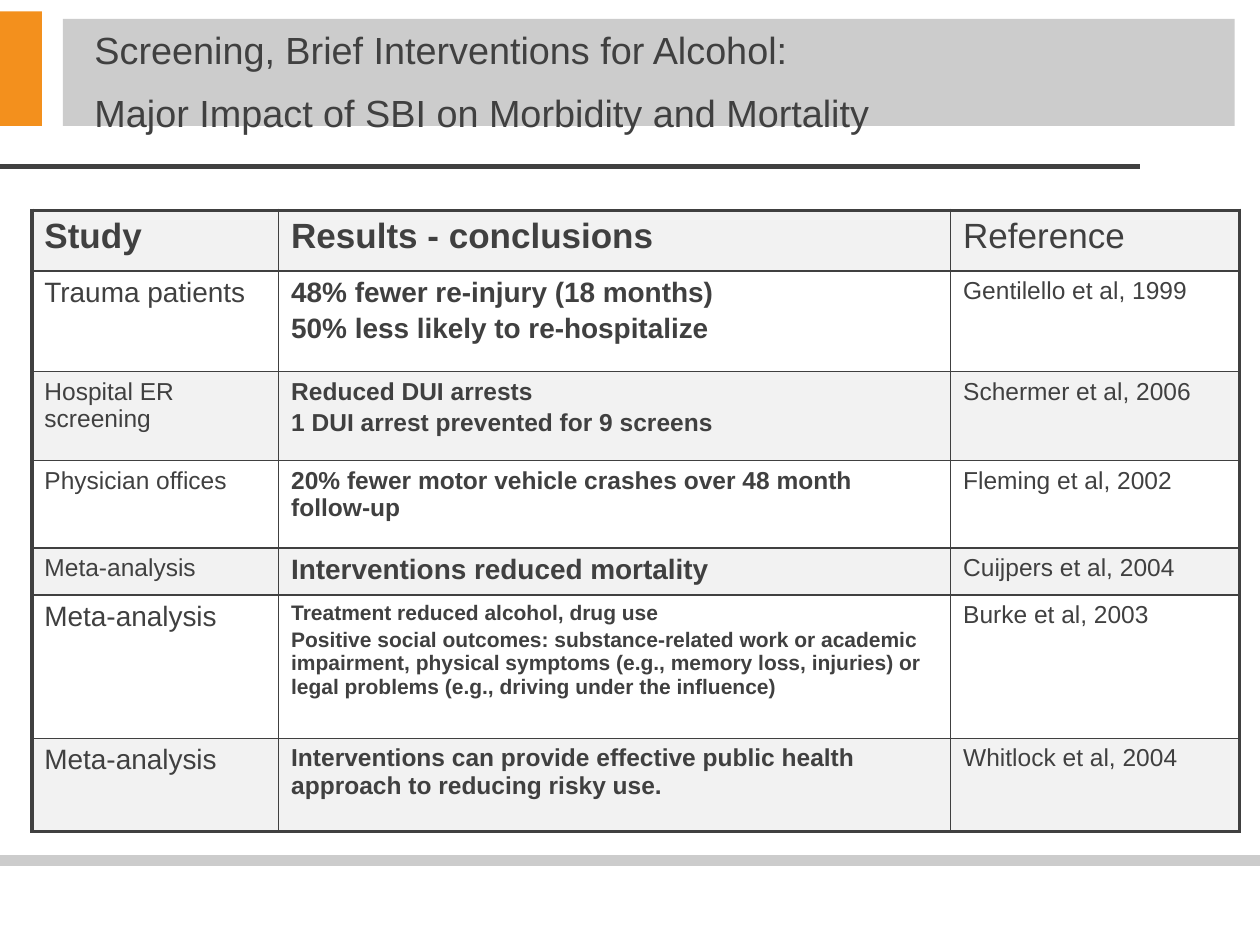
from lxml import etree
from pptx import Presentation
from pptx import util as u
from pptx.dml.color import RGBColor
from pptx.enum import shapes, text
from pptx.oxml.ns import qn

Pt = u.Pt


def rgb(value):
    return RGBColor.from_string(value)


class Deck:
    font = "Arial"
    ink = "404040"
    gray = "CCCCCC"
    accent = "F3901D"
    band = "F2F2F2"
    outer, inner = 2.25, 1

    def __init__(self, width, height):
        self.prs = Presentation()
        self.prs.slide_width, self.prs.slide_height = Pt(width), Pt(height)
        self.s = self.prs.slides.add_slide(self.prs.slide_layouts[6])

    def line(self, x1, x2, y, color, width):
        c = self.s.shapes.add_connector(
            shapes.MSO_CONNECTOR.STRAIGHT, Pt(x1), Pt(y), Pt(x2), Pt(y))
        c.line.color.rgb = rgb(color)
        c.line.width = Pt(width)
        etree.SubElement(c._element.spPr, qn("a:effectLst"))

    def rect(self, x, y, w, h, color):
        sp = self.s.shapes.add_shape(
            shapes.MSO_SHAPE.RECTANGLE, Pt(x), Pt(y), Pt(w), Pt(h))
        sp.shadow.inherit = False
        sp.fill.solid()
        sp.fill.fore_color.rgb = rgb(color)
        sp.line.fill.background()
        return sp

    def style(self, p, size, bold=False):
        p.alignment = text.PP_ALIGN.LEFT
        for r in p.runs:
            r.font.name = self.font
            r.font.size = Pt(size)
            r.font.bold = bold
            r.font.color.rgb = rgb(self.ink)

    def title(self, x, y, w, h, value, size):
        tf = self.rect(x, y, w, h, self.gray).text_frame
        tf.word_wrap = True
        tf.vertical_anchor = text.MSO_ANCHOR.MIDDLE
        tf.margin_left = Pt(18)
        tf.margin_right = Pt(7.2)
        tf.margin_top = tf.margin_bottom = Pt(3.6)
        p = tf.paragraphs[0]
        p.text = value
        p.line_spacing = Pt(36)
        self.style(p, size)

    def borders(self, cell, widths):
        tc_pr = cell._tc.get_or_add_tcPr()
        for i, (side, width) in enumerate(zip("LRTB", widths)):
            ln = etree.Element(qn(f"a:ln{side}"), w=str(Pt(width)))
            fill = etree.SubElement(ln, qn("a:solidFill"))
            etree.SubElement(fill, qn("a:srgbClr"), val=self.ink)
            tc_pr.insert(i, ln)

    def cell(self, cell, value, size, bold, banded):
        tf = cell.text_frame
        tf.text = value
        for i, p in enumerate(tf.paragraphs):
            p.space_before = Pt(0.17 * size if i else 0)
            self.style(p, size, bold)
        if banded:
            cell.fill.solid()
            cell.fill.fore_color.rgb = rgb(self.band)
        else:
            cell.fill.background()

    def table(self, x, y, widths, heights, rows):
        t = self.s.shapes.add_table(
            len(rows), len(widths), Pt(x), Pt(y),
            Pt(sum(widths)), Pt(sum(heights))).table
        t.first_row = t.horz_banding = False
        for column, width in zip(t.columns, widths):
            column.width = Pt(width)
        for i, (row, height) in enumerate(zip(rows, heights)):
            t.rows[i].height = Pt(height)
            for j, (value, size) in enumerate(row):
                cell = t.cell(i, j)
                bold = j == 1 or i == j == 0
                self.cell(cell, value, size, bold, i % 2 == 0)
                edges = (j == 0, j == len(widths) - 1, i == 0, i == len(rows) - 1)
                self.borders(cell, [self.outer if e else self.inner for e in edges])


STUDIES = [
    [("Study", 20), ("Results - conclusions", 20), ("Reference", 20)],
    [("Trauma patients", 16),
     ("48% fewer re-injury (18 months)\n50% less likely to re-hospitalize", 16),
     ("Gentilello et al, 1999", 14)],
    [("Hospital ER screening", 14),
     ("Reduced DUI arrests\n1 DUI arrest prevented for 9 screens", 14),
     ("Schermer et al, 2006", 14)],
    [("Physician offices", 14),
     ("20% fewer motor vehicle crashes over 48 month follow-up", 14),
     ("Fleming et al, 2002", 14)],
    [("Meta-analysis", 14),
     ("Interventions reduced mortality", 16),
     ("Cuijpers et al, 2004", 14)],
    [("Meta-analysis", 16),
     ("Treatment reduced alcohol, drug use\n"
      "Positive social outcomes: substance-related work or academic impairment, "
      "physical symptoms (e.g., memory loss, injuries) or legal problems "
      "(e.g., driving under the influence)", 12),
     ("Burke et al, 2003", 14)],
    [("Meta-analysis", 16),
     ("Interventions can provide effective public health approach "
      "to reducing risky use.", 14),
     ("Whitlock et al, 2004", 14)],
]


def main():
    d = Deck(720, 540)
    d.line(0, 720, 491.8, d.gray, 6)
    d.rect(0, 6.5, 24, 65.5, d.accent)
    d.title(36, 10.8, 669.6, 61.2,
            "Screening, Brief Interventions for Alcohol:\v"
            "Major Impact of SBI on Morbidity and Mortality", 21.6)
    d.table(18.2, 120.2, [141, 384, 165], [34.6, 57.5, 51, 50, 26.7, 82, 53.4], STUDIES)
    d.line(-20, 651.6, 95, d.ink, 3)
    d.prs.save("out.pptx")


if __name__ == "__main__":
    main()
